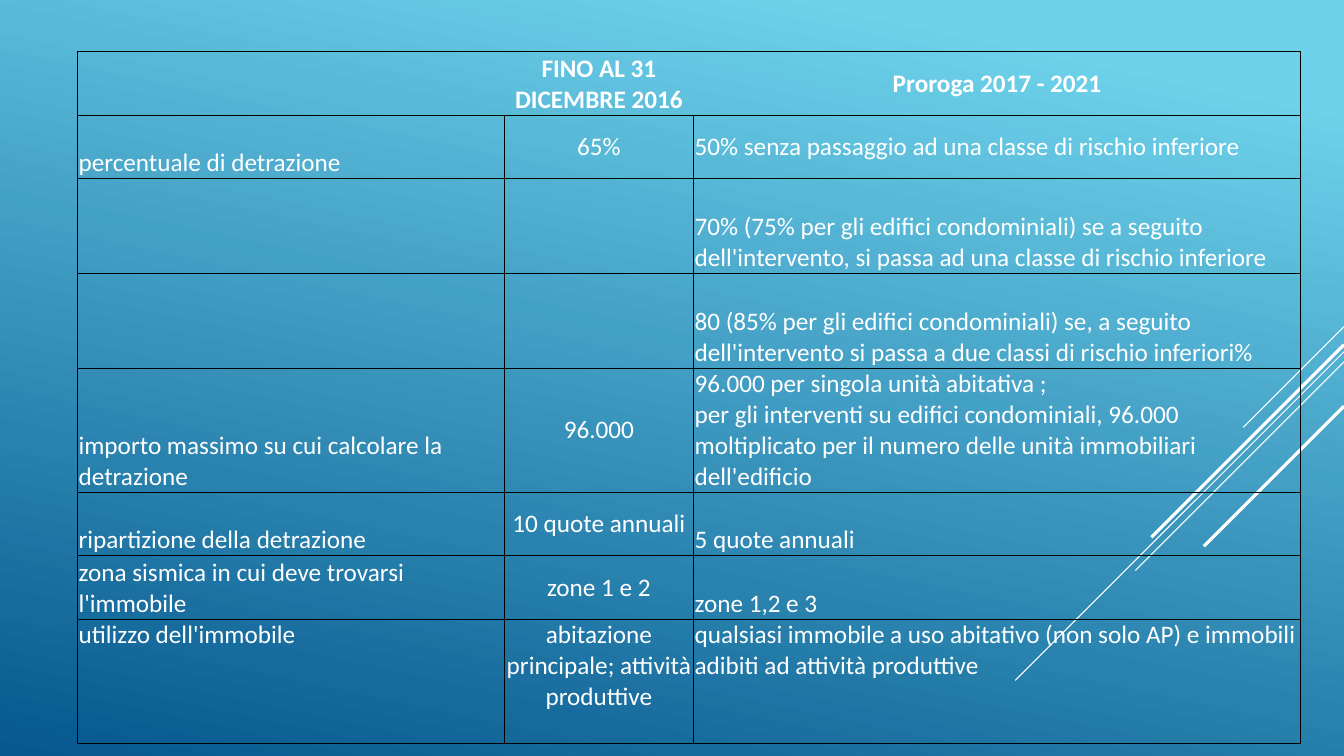
import pptx
import pptx.util
import pptx.oxml
import pptx.oxml.ns
import pptx.dml.color
import pptx.enum.shapes
import pptx.enum.text

Inches = pptx.util.Inches
Pt = pptx.util.Pt
ALIGN = pptx.enum.text.PP_ALIGN
ANCHOR = pptx.enum.text.MSO_ANCHOR

COLORS = {"sky": "6ED2EB", "ocean": "06588E", "white": "FFFFFF", "border": "000000"}
WIDTH, HEIGHT = 13.33, 7.5


def rgb(name):
    return pptx.dml.color.RGBColor.from_string(COLORS[name])


def add_border(cell, side, points):
    properties = cell._tc.get_or_add_tcPr()
    line = pptx.oxml.parse_xml(
        f'<a:ln{side} {pptx.oxml.ns.nsdecls("a")} w="{int(Pt(points))}"/>')
    if points:
        line.append(pptx.oxml.parse_xml(
            f'<a:solidFill {pptx.oxml.ns.nsdecls("a")}>'
            f'<a:srgbClr val="{COLORS["border"]}"/></a:solidFill>'))
    else:
        line.append(pptx.oxml.parse_xml(f'<a:noFill {pptx.oxml.ns.nsdecls("a")}/>'))
    properties.append(line)


presentation = pptx.Presentation()
presentation.slide_width = Inches(WIDTH)
presentation.slide_height = Inches(HEIGHT)
slide = presentation.slides.add_slide(presentation.slide_layouts[6])

background = slide.background.fill
background.gradient()
background.gradient_angle = 360 - 102
for stop, (position, color) in zip(background.gradient_stops, [(0.1, "sky"), (1, "ocean")]):
    stop.position = position
    stop.color.rgb = rgb(color)

diagonals = [(3.24, 1, 0.75), (3.49, 3.26, 0.75), (3.59, 2.07, 0.75),
             (3.42, 1.91, 2.25), (4.03, 1.39, 2.25)]
for top, reach, weight in diagonals:
    diagonal = slide.shapes.add_connector(
        pptx.enum.shapes.MSO_CONNECTOR.STRAIGHT,
        Inches(WIDTH), Inches(top), Inches(WIDTH - reach), Inches(top + reach))
    diagonal.line.color.rgb = rgb("white")
    diagonal.line.width = Pt(weight)
    diagonal._element.spPr.append(
        pptx.oxml.parse_xml(f'<a:effectLst {pptx.oxml.ns.nsdecls("a")}/>'))

column_widths = [4.23, 1.88, 6.02]
row_heights = [0.63, 0.63, 0.94, 0.94, 1.23, 0.63, 0.63, 1.23]
rows = [
    ["", "FINO AL 31 DICEMBRE 2016", "Proroga 2017 - 2021"],
    ["percentuale di detrazione", "65%",
     "50% senza passaggio ad una classe di rischio inferiore"],
    ["", "", "70% (75% per gli edifici condominiali) se a seguito dell'intervento, "
             "si passa ad una classe di rischio inferiore"],
    ["", "", "80 (85% per gli edifici condominiali) se, a seguito dell'intervento "
             "si passa a due classi di rischio inferiori%"],
    ["importo massimo su cui calcolare la detrazione", "96.000",
     "96.000 per singola unità abitativa ;\n"
     "per gli interventi su edifici condominiali, 96.000 moltiplicato per il numero "
     "delle unità immobiliari dell'edificio"],
    ["ripartizione della detrazione", "10 quote annuali", "5 quote annuali"],
    ["zona sismica in cui deve trovarsi l'immobile", "zone 1 e 2", "zone 1,2 e 3"],
    ["utilizzo dell'immobile", "abitazione principale; attività produttive",
     "qualsiasi immobile a uso abitativo (non solo AP) e immobili adibiti "
     "ad attività produttive"],
]
last_row, last_column = len(rows) - 1, len(column_widths) - 1

table = slide.shapes.add_table(
    len(rows), len(column_widths), Inches(0.77), Inches(0.51),
    Inches(sum(column_widths)), Inches(sum(row_heights))).table
table.first_row = False
table.horz_banding = False
for column, width in zip(table.columns, column_widths):
    column.width = Inches(width)
for row, height in zip(table.rows, row_heights):
    row.height = Inches(height)

for row_index, texts in enumerate(rows):
    header = row_index == 0
    for column_index, text in enumerate(texts):
        cell = table.cell(row_index, column_index)
        add_border(cell, "L", (1 if column_index == 0 else 0) if header else 0.5)
        add_border(cell, "R", (1 if column_index == last_column else 0) if header else 0.5)
        add_border(cell, "T", 1 if header else 0.5)
        add_border(cell, "B", 0.5)
        cell.fill.background()
        cell.margin_left = cell.margin_right = cell.margin_top = Inches(0.01)
        cell.margin_bottom = 0

        if row_index == last_row:
            cell.vertical_anchor = ANCHOR.TOP
        elif (row_index, column_index) in [(0, 2), (1, 2)] or (column_index == 1 and not header):
            cell.vertical_anchor = ANCHOR.MIDDLE
        else:
            cell.vertical_anchor = ANCHOR.BOTTOM

        for line_index, line in enumerate(text.split("\n") if text else []):
            frame = cell.text_frame
            paragraph = frame.add_paragraph() if line_index else frame.paragraphs[0]
            paragraph.alignment = ALIGN.CENTER if header or column_index == 1 else ALIGN.LEFT
            run = paragraph.add_run()
            run.text = line
            run.font.name = "Calibri"
            run.font.size = Pt(18)
            run.font.bold = header
            run.font.color.rgb = rgb("white")

presentation.save("out.pptx")
